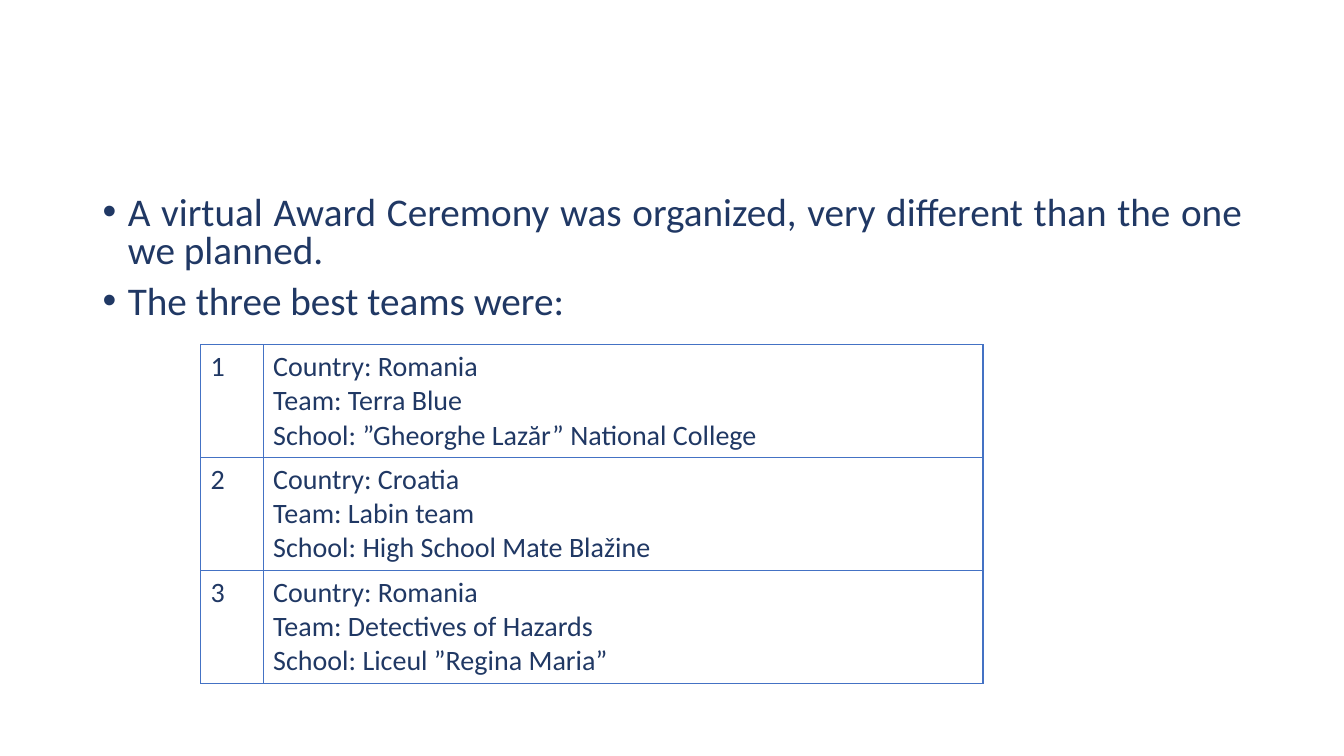
from dataclasses import dataclass

import pptx
import pptx.dml.color
import pptx.enum.text
import pptx.oxml
import pptx.oxml.ns
import pptx.util
from pptx.util import Inches


@dataclass(frozen=True)
class Theme:
    font: str = "Calibri"
    ink: str = "203864"
    border: str = "4472C4"
    body_size: int = 28
    table_size: int = 20


THEME = Theme()

POINTS = [
    "A virtual Award Ceremony was organized, very different than the one we planned.",
    "The three best teams were:",
]
WINNERS = [
    ("Romania", "Terra Blue", "”Gheorghe Lazăr” National College"),
    ("Croatia", "Labin team", "High School Mate Blažine"),
    ("Romania", "Detectives of Hazards", "Liceul ”Regina Maria”"),
]


def style_font(para, size):
    para.font.name = THEME.font
    para.font.size = pptx.util.Pt(size)
    para.font.color.rgb = pptx.dml.color.RGBColor.from_string(THEME.ink)


def add_bullet(para):
    properties = para._p.get_or_add_pPr()
    properties.set("marL", str(Inches(0.25)))
    properties.set("indent", str(Inches(-0.25)))
    namespace = pptx.oxml.ns.nsdecls("a")
    for xml in (f'<a:buFont {namespace} typeface="Arial"/>',
                f'<a:buChar {namespace} char="•"/>'):
        properties.append(pptx.oxml.parse_xml(xml))


def add_points(page, left, top, width, height):
    frame = page.shapes.add_textbox(left, top, width, height).text_frame
    frame.word_wrap = True
    for index, point in enumerate(POINTS):
        para = frame.add_paragraph() if index else frame.paragraphs[0]
        para.text = point
        add_bullet(para)
        para.alignment = pptx.enum.text.PP_ALIGN.JUSTIFY
        para.line_spacing = 0.8
        if index:
            para.space_before = pptx.util.Pt(10)
        style_font(para, THEME.body_size)


def add_borders(cell):
    properties = cell._tc.get_or_add_tcPr()
    for side in ("lnL", "lnR", "lnT", "lnB"):
        properties.append(pptx.oxml.parse_xml(
            f'<a:{side} {pptx.oxml.ns.nsdecls("a")} w="{pptx.util.Pt(1)}">'
            f'<a:solidFill><a:srgbClr val="{THEME.border}"/></a:solidFill></a:{side}>'))


def fill_cell(cell, text):
    cell.text = text
    add_borders(cell)
    cell.fill.background()
    for para in cell.text_frame.paragraphs:
        style_font(para, THEME.table_size)


def add_winners(page, left, top, width, height):
    table = page.shapes.add_table(len(WINNERS), 2, left, top, width, height).table
    table.first_row = False
    table.horz_banding = False
    rank_width = Inches(0.62)
    table.columns[0].width = rank_width
    table.columns[1].width = width - rank_width
    for row, (country, team, school) in enumerate(WINNERS):
        fill_cell(table.cell(row, 0), str(row + 1))
        fill_cell(table.cell(row, 1),
                  f"Country: {country}\nTeam: {team}\nSchool: {school}")


def main():
    deck = pptx.Presentation()
    deck.slide_width = Inches(13.33)
    deck.slide_height = Inches(7.5)
    page = deck.slides.add_slide(deck.slide_layouts[6])
    add_points(page, Inches(0.92), Inches(1.9), Inches(11.5), Inches(1.44))
    add_winners(page, Inches(1.99), Inches(3.42), Inches(7.76), Inches(3.36))
    deck.save("out.pptx")


if __name__ == "__main__":
    main()
